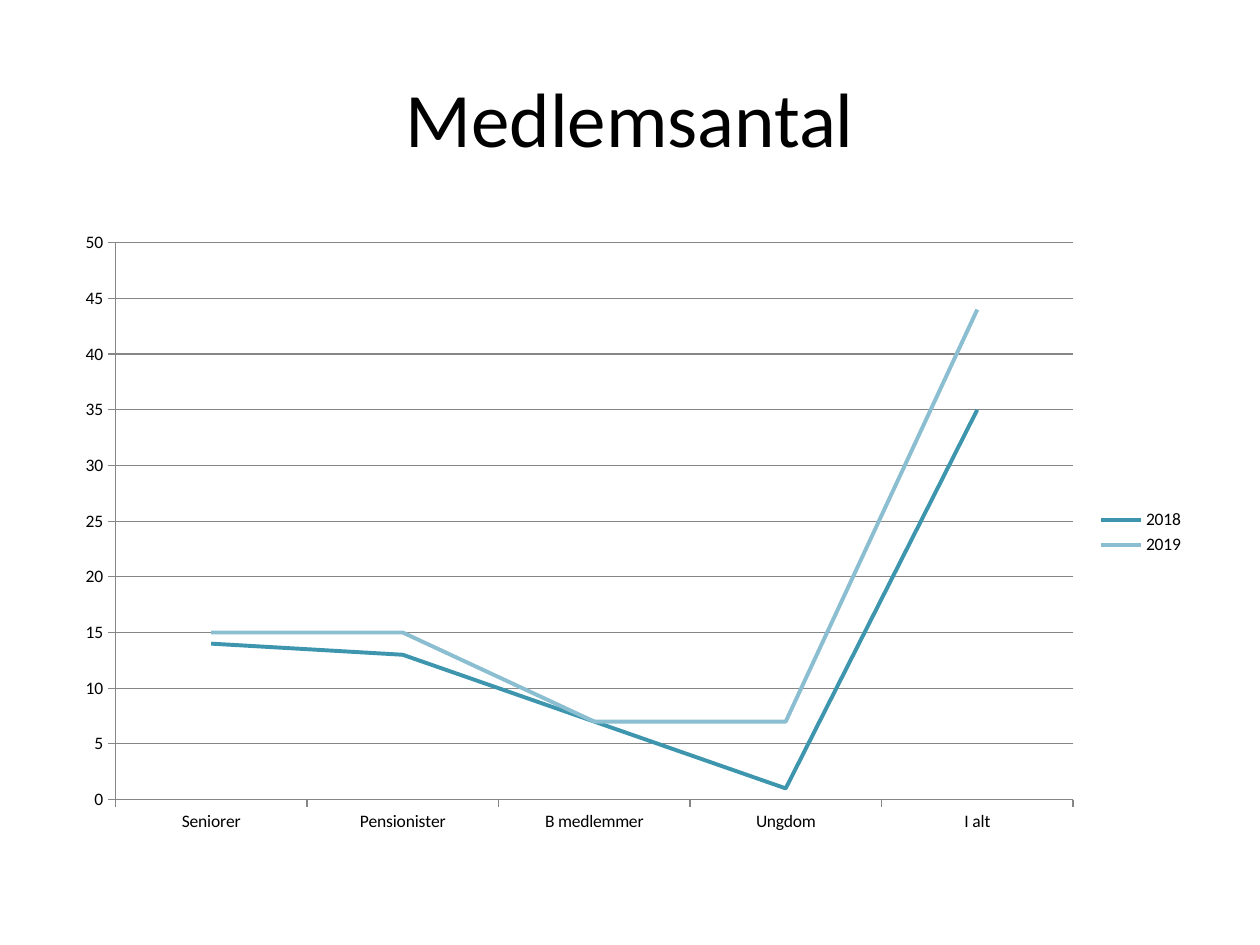
from pptx import Presentation
from pptx.chart.data import CategoryChartData
from pptx.dml.color import RGBColor
from pptx.enum.chart import XL_CHART_TYPE, XL_LEGEND_POSITION, XL_MARKER_STYLE, XL_TICK_MARK
from pptx.enum.text import MSO_ANCHOR, PP_ALIGN
from pptx.util import Inches, Pt

LINE = XL_CHART_TYPE.LINE
RIGHT = XL_LEGEND_POSITION.RIGHT
NO_MARKER = XL_MARKER_STYLE.NONE
OUTSIDE = XL_TICK_MARK.OUTSIDE
MIDDLE = MSO_ANCHOR.MIDDLE
CENTER = PP_ALIGN.CENTER

TITLE = "Medlemsantal"
CATEGORIES = ["Seniorer", "Pensionister", "B medlemmer", "Ungdom", "I alt"]
SERIES = {"2018": (14, 13, 7, 1, 35), "2019": (15, 15, 7, 7, 44)}
FONT = "Calibri"
COLORS = {"text": "000000", "grid": "868686", "2018": "3D96AE", "2019": "8ABED0"}
TITLE_BOX = (0.5, 0.3, 9, 1.25)
CHART_BOX = (0.5, 1.75, 9, 4.95)


def color(name):
    return RGBColor.from_string(COLORS[name])


def style_font(font, size):
    font.name = FONT
    font.size = Pt(size)
    font.color.rgb = color("text")


def style_line(line, name, width):
    line.color.rgb = color(name)
    line.width = Pt(width)


def add_title(s):
    tf = s.shapes.add_textbox(*map(Inches, TITLE_BOX)).text_frame
    tf.word_wrap = True
    tf.vertical_anchor = MIDDLE
    p = tf.paragraphs[0]
    p.text = TITLE
    p.alignment = CENTER
    style_font(p.font, 44)


def add_members_chart(s):
    data = CategoryChartData()
    data.categories = CATEGORIES
    for name, values in SERIES.items():
        data.add_series(name, values)
    chart = s.shapes.add_chart(LINE, *map(Inches, CHART_BOX), data).chart
    style_font(chart.font, 10)
    chart.has_title = False
    chart.has_legend = True
    chart.legend.position = RIGHT
    chart.legend.include_in_layout = False

    for axis in (chart.category_axis, chart.value_axis):
        axis.major_tick_mark = OUTSIDE
        style_line(axis.format.line, "grid", 0.75)
    value_axis = chart.value_axis
    value_axis.minimum_scale, value_axis.maximum_scale = 0, 50
    value_axis.major_unit = 5
    value_axis.has_major_gridlines = True
    style_line(value_axis.major_gridlines.format.line, "grid", 0.75)

    chart.plots[0].vary_by_categories = False
    for series in chart.plots[0].series:
        series.smooth = False
        series.marker.style = NO_MARKER
        style_line(series.format.line, series.name, 2.25)


def main():
    prs = Presentation()
    prs.slide_width, prs.slide_height = Inches(10), Inches(7.5)
    s = prs.slides.add_slide(prs.slide_layouts[6])
    add_title(s)
    add_members_chart(s)
    prs.save("out.pptx")


if __name__ == "__main__":
    main()
